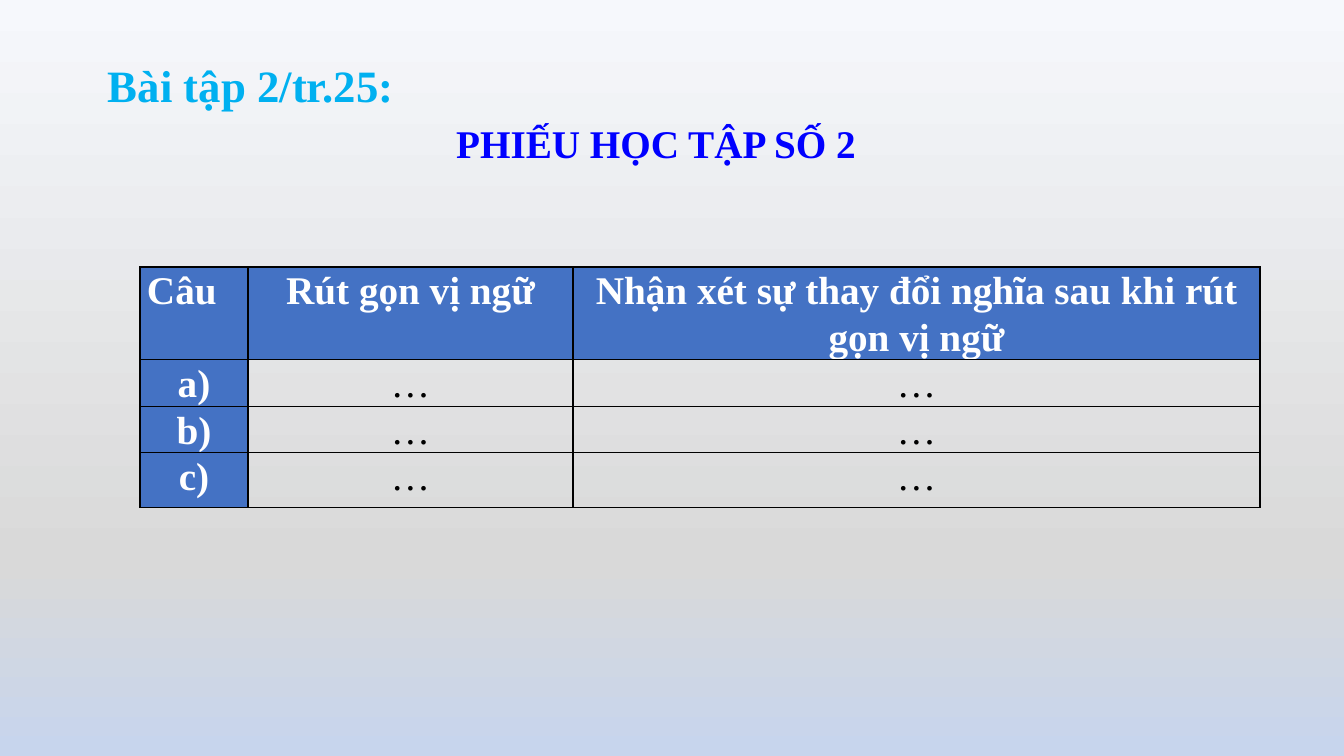
import copy

import pptx
import pptx.dml.color
import pptx.enum.text
import pptx.oxml
import pptx.oxml.ns
import pptx.util

RGBColor = pptx.dml.color.RGBColor
PP_ALIGN = pptx.enum.text.PP_ALIGN

EMU_PER_PX = 914400 / 100.8
FONT = "Times New Roman"

WHITE = RGBColor(0xFF, 0xFF, 0xFF)
BLACK = RGBColor(0x00, 0x00, 0x00)
HEADER_BLUE = RGBColor(0x44, 0x72, 0xC4)
TITLE_BLUE = RGBColor(0x00, 0x00, 0xFF)
EXERCISE_CYAN = RGBColor(0x00, 0xB0, 0xF0)
SKY_TOP = RGBColor(0xF6, 0xF8, 0xFC)
SKY_MIDDLE = RGBColor(0xD9, 0xD9, 0xD9)
SKY_BOTTOM = RGBColor(0xC7, 0xD5, 0xED)

COLUMN_WIDTHS = (108, 325, 687)
ROW_HEIGHTS = (85, 40, 40, 55)
WORKSHEET = (
    ("Câu", "Rút gọn vị ngữ", "Nhận xét sự thay đổi nghĩa sau khi rút gọn vị ngữ"),
    ("a)", "…", "…"),
    ("b)", "…", "…"),
    ("c)", "…", "…"),
)


def px(length):
    return pptx.util.Emu(round(length * EMU_PER_PX))


def paint_background(slide):
    """Fill the slide with a three-stop gradient running from top to bottom."""
    fill = slide.background.fill
    fill.gradient()
    fill.gradient_angle = 270
    first = fill.gradient_stops[0]._gs
    first.addnext(copy.deepcopy(first))
    stops = ((0, SKY_TOP), (0.74, SKY_MIDDLE), (1, SKY_BOTTOM))
    for stop, (position, color) in zip(fill.gradient_stops, stops):
        stop.position = position
        stop.color.rgb = color


def write(paragraph, text, size, color, bold, align, spacing):
    paragraph.text = text
    paragraph.alignment = align
    paragraph.line_spacing = spacing
    font = paragraph.font
    font.name = FONT
    font.size = pptx.util.Pt(size)
    font.bold = bold
    font.color.rgb = color


def add_heading(slide, box, text, size, color, align, spacing, wrap, anchor):
    frame = slide.shapes.add_textbox(*map(px, box)).text_frame
    frame.word_wrap = wrap
    frame.auto_size = pptx.enum.text.MSO_AUTO_SIZE.SHAPE_TO_FIT_TEXT
    frame.vertical_anchor = anchor
    write(frame.paragraphs[0], text, size, color, True, align, spacing)


def add_borders(cell):
    properties = cell._tc.get_or_add_tcPr()
    for side in ("lnL", "lnR", "lnT", "lnB"):
        properties.append(pptx.oxml.parse_xml(
            f'<a:{side} {pptx.oxml.ns.nsdecls("a")} w="{pptx.util.Pt(1)}">'
            f'<a:solidFill><a:srgbClr val="{BLACK}"/></a:solidFill></a:{side}>'
        ))


def fill_cell(cell, text, is_label, align):
    cell.margin_left = cell.margin_right = px(7)
    cell.margin_top = cell.margin_bottom = 0
    add_borders(cell)
    if is_label:
        cell.fill.solid()
        cell.fill.fore_color.rgb = HEADER_BLUE
    else:
        cell.fill.background()
    write(cell.text_frame.paragraphs[0], text, 28,
          WHITE if is_label else BLACK, is_label, align, 1.07)


def add_worksheet(slide, left, top):
    worksheet = slide.shapes.add_table(
        len(ROW_HEIGHTS), len(COLUMN_WIDTHS), px(left), px(top),
        px(sum(COLUMN_WIDTHS)), px(sum(ROW_HEIGHTS))).table
    for column, width in zip(worksheet.columns, COLUMN_WIDTHS):
        column.width = px(width)
    for row, height in zip(worksheet.rows, ROW_HEIGHTS):
        row.height = px(height)
    for r, texts in enumerate(WORKSHEET):
        for c, text in enumerate(texts):
            align = PP_ALIGN.LEFT if r == c == 0 else PP_ALIGN.CENTER
            fill_cell(worksheet.cell(r, c), text, r == 0 or c == 0, align)


def main():
    presentation = pptx.Presentation()
    presentation.slide_width = px(1344)
    presentation.slide_height = px(756)
    slide = presentation.slides.add_slide(presentation.slide_layouts[6])
    paint_background(slide)
    add_worksheet(slide, 140, 267)
    anchors = pptx.enum.text.MSO_ANCHOR
    add_heading(slide, (444, 114, 424, 57), "PHIẾU HỌC TẬP SỐ 2", 28, TITLE_BLUE,
                PP_ALIGN.CENTER, 1.0, False, anchors.MIDDLE)
    add_heading(slide, (98, 26, 313, 82), "Bài tập 2/tr.25:", 32, EXERCISE_CYAN,
                PP_ALIGN.JUSTIFY, 1.5, True, anchors.TOP)
    presentation.save("out.pptx")


if __name__ == "__main__":
    main()
